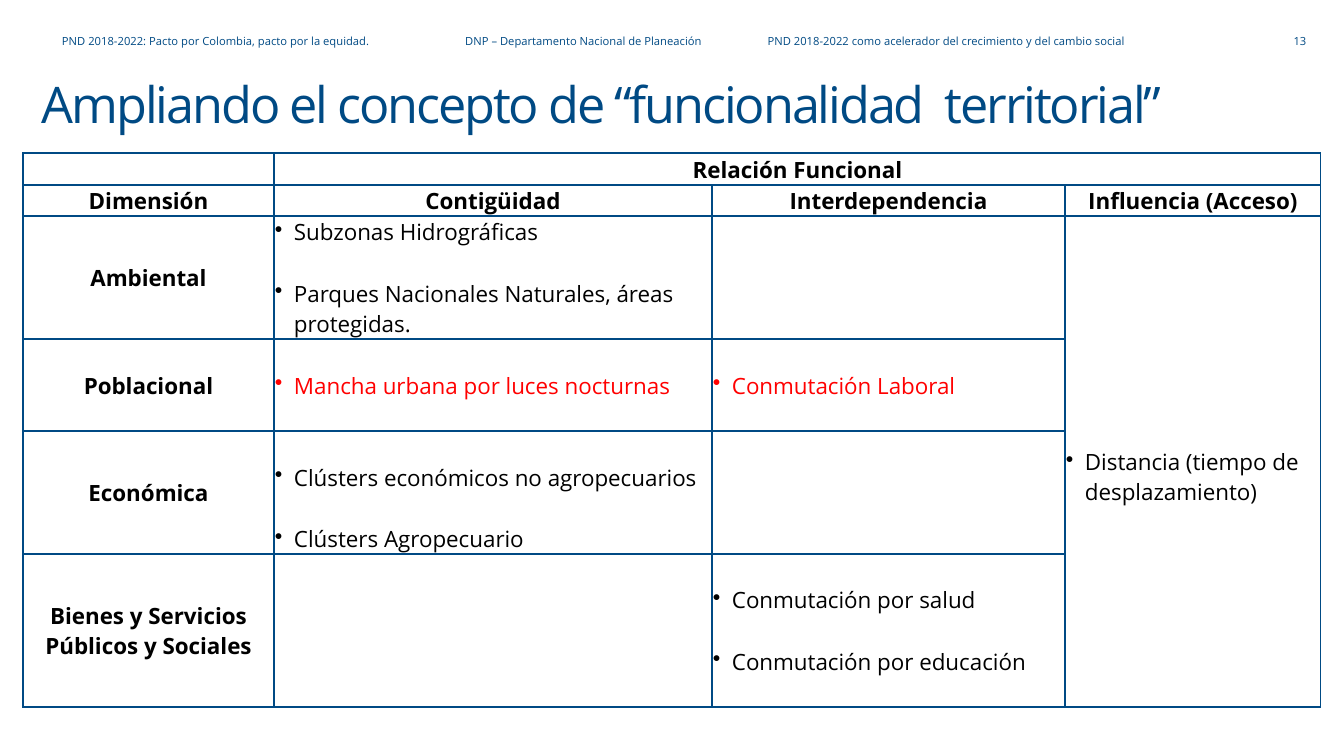
from dataclasses import dataclass

from lxml import etree
from pptx import Presentation
from pptx import util as u
from pptx.dml.color import RGBColor
from pptx.enum import text as t
from pptx.oxml import ns

SCALE = 914400 / 100.8
NAVY, BLACK, RED = "004A84", "000000", "FF0000"
MID, LOW = t.MSO_ANCHOR.MIDDLE, t.MSO_ANCHOR.BOTTOM
LEFT, CENTER = t.PP_ALIGN.LEFT, t.PP_ALIGN.CENTER
COLS = (251, 438, 353, 256)
ROWS = (32, 31, 123, 92, 123, 153)


@dataclass
class Entry:
    """Content of one table cell, with the number of rows and columns it spans."""
    row: int
    col: int
    lines: tuple[str, ...]
    list: bool = False
    anchor: t.MSO_ANCHOR = MID
    hue: str = BLACK
    high: int = 1
    wide: int = 1
    top: int = 1


ENTRIES = [
    Entry(0, 1, ("Relación Funcional",), anchor=LOW, wide=3),
    *(Entry(1, col, (head,), anchor=LOW) for col, head in enumerate(
        ("Dimensión", "Contigüidad", "Interdependencia", "Influencia (Acceso)"))),
    *(Entry(row, 0, (name,)) for row, name in enumerate(
        ("Ambiental", "Poblacional", "Económica",
         "Bienes y Servicios Públicos y Sociales"), 2)),
    Entry(2, 1, ("Subzonas Hidrográficas",
                 "Parques Nacionales Naturales, áreas protegidas."), True),
    Entry(2, 3, ("Distancia (tiempo de desplazamiento)",), True, high=4, top=31),
    Entry(3, 1, ("Mancha urbana por luces nocturnas",), True, hue=RED),
    Entry(3, 2, ("Conmutación Laboral",), True, hue=RED),
    Entry(4, 1, ("Clústers económicos no agropecuarios",
                 "Clústers Agropecuario"), True, LOW),
    Entry(5, 2, ("Conmutación por salud", "Conmutación por educación"), True),
]


def px(n: int) -> u.Emu:
    return u.Emu(round(n * SCALE))


def paint(code: str) -> RGBColor:
    return RGBColor.from_string(code)


def place(shape, left: int, top: int, width: int, height: int) -> None:
    shape.left, shape.top = px(left), px(top)
    shape.width, shape.height = px(width), px(height)


def inset(box, left: int, top: int, right: int, low: int) -> None:
    box.margin_left, box.margin_top = px(left), px(top)
    box.margin_right, box.margin_bottom = px(right), px(low)


def write(frame, *lines: str, size: int, hue: str = NAVY, bold: bool = False,
          align: t.PP_ALIGN = LEFT, list: bool = False, gap: int = 0,
          lead: float = 1.0, track: int = 0) -> None:
    """Fill a text frame, one paragraph a line; gap (points) parts the paragraphs."""
    frame.word_wrap = True
    for i, line in enumerate(lines):
        para = frame.add_paragraph() if i else frame.paragraphs[0]
        para.alignment, para.line_spacing = align, lead
        para.space_before = u.Pt(gap if i else 0)
        props = para._p.get_or_add_pPr()
        dent = px(19) if list else 0
        props.set("marL", str(dent))
        props.set("indent", str(-dent))
        if list:
            etree.SubElement(props, ns.qn("a:buChar"), char="•")
        else:
            etree.SubElement(props, ns.qn("a:buNone"))
        run = para.add_run()
        run.text = line
        run.font.name, run.font.size, run.font.bold = "Open Sans", u.Pt(size), bold
        run.font.color.rgb = paint(hue)
        if track:
            run.font._element.set("spc", str(track))


def border(cell) -> None:
    props = cell._tc.get_or_add_tcPr()
    for i, side in enumerate(("lnL", "lnR", "lnT", "lnB")):
        line = etree.Element(ns.qn(f"a:{side}"), w=str(u.Pt(1)))
        fill = etree.SubElement(line, ns.qn("a:solidFill"))
        etree.SubElement(fill, ns.qn("a:srgbClr"), val=NAVY)
        props.insert(i, line)


def heads(slide) -> None:
    title, body = slide.shapes.title, slide.placeholders[1]
    place(title, 32, 78, 1280, 62)
    place(body, 52, 26, 1180, 31)
    for shape, anchor in ((title, t.MSO_ANCHOR.TOP), (body, MID)):
        shape.text_frame.auto_size = t.MSO_AUTO_SIZE.NONE
        shape.text_frame.vertical_anchor = anchor
    inset(title.text_frame, 10, 2, 10, 0)
    inset(body.text_frame, 10, 0, 20, 0)
    write(title.text_frame, "Ampliando el concepto de “funcionalidad  territorial”",
          size=36, lead=0.9, track=-150)
    write(body.text_frame,
          "PND 2018-2022: Pacto por Colombia, pacto por la equidad."
          "\t\tDNP – Departamento Nacional de Planeación"
          "\t\tPND 2018-2022 como acelerador del crecimiento y del cambio social",
          size=8, lead=0.9)
    page = slide.shapes.add_textbox(px(1280), px(29), px(40), px(24)).text_frame
    page.vertical_anchor = MID
    inset(page, 0, 0, 0, 0)
    write(page, "13", size=8, align=CENTER)


def grid(slide) -> None:
    table = slide.shapes.add_table(len(ROWS), len(COLS), px(23), px(153),
                                   px(sum(COLS)), px(sum(ROWS))).table
    table.first_row = table.horz_banding = False
    for col, width in zip(table.columns, COLS):
        col.width = px(width)
    for row, height in zip(table.rows, ROWS):
        row.height = px(height)
    for cell in table.iter_cells():
        inset(cell, 1, 1, 1, 0)
        cell.fill.background()
        border(cell)
        etree.SubElement(cell.text_frame.paragraphs[0]._p,
                         ns.qn("a:endParaRPr"), sz="1600")
    for item in ENTRIES:
        cell = table.cell(item.row, item.col)
        if item.high > 1 or item.wide > 1:
            cell.merge(table.cell(item.row + item.high - 1, item.col + item.wide - 1))
        cell.vertical_anchor, cell.margin_top = item.anchor, px(item.top)
        write(cell.text_frame, *item.lines, size=16, hue=item.hue, list=item.list,
              bold=not item.list, align=LEFT if item.list else CENTER, gap=22)


def main() -> None:
    deck = Presentation()
    deck.slide_width, deck.slide_height = px(1344), px(756)
    slide = deck.slides.add_slide(deck.slide_layouts[1])
    heads(slide)
    grid(slide)
    deck.save("out.pptx")


if __name__ == "__main__":
    main()
